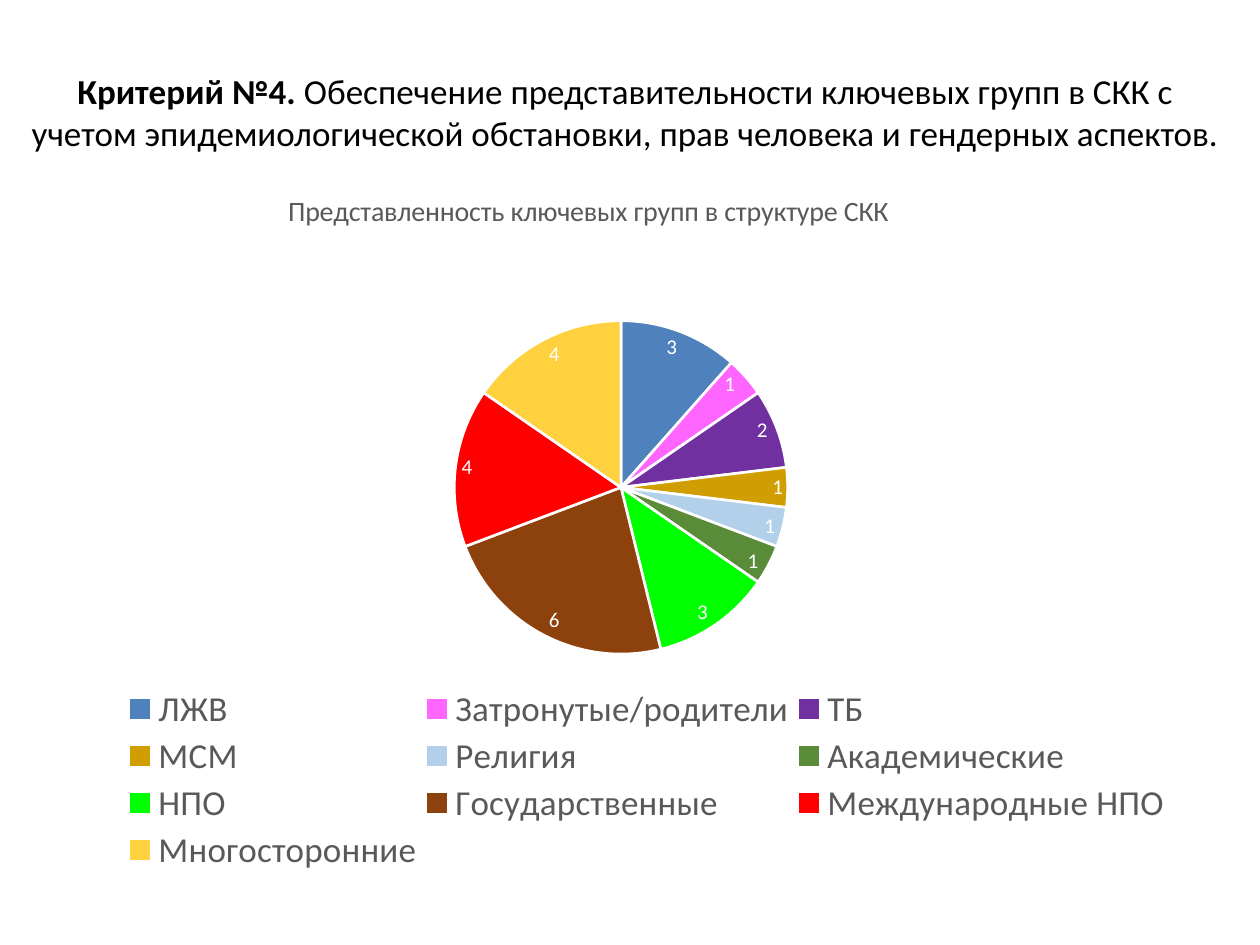
from pptx import Presentation
from pptx.chart.data import CategoryChartData
from pptx.dml.color import RGBColor
from pptx.enum.chart import XL_CHART_TYPE, XL_LABEL_POSITION, XL_LEGEND_POSITION
from pptx.enum.text import MSO_ANCHOR, PP_ALIGN
from pptx.oxml import parse_xml
from pptx.util import Cm, Pt

PIE = XL_CHART_TYPE.PIE
BEST_FIT = XL_LABEL_POSITION.BEST_FIT
BOTTOM = XL_LEGEND_POSITION.BOTTOM
MIDDLE = MSO_ANCHOR.MIDDLE
CENTER = PP_ALIGN.CENTER

FONT = "Calibri"
COLORS = {"text": "000000", "muted": "595959", "white": "FFFFFF"}
HEADING = [
    ("Критерий №4. ", True),
    ("Обеспечение представительности ключевых групп в СКК с учетом "
     "эпидемиологической обстановки, прав человека и гендерных аспектов.", False),
]
CHART_TITLE = "Представленность ключевых групп в структуре СКК"
GROUPS = [
    ("ЛЖВ", 3, "4F81BD"),
    ("Затронутые/родители", 1, "FF66FF"),
    ("ТБ", 2, "7030A0"),
    ("МСМ", 1, "D09E00"),
    ("Религия", 1, "B3D0EB"),
    ("Академические", 1, "5A8B39"),
    ("НПО", 3, "00FF00"),
    ("Государственные", 6, "8D410D"),
    ("Международные НПО", 4, "FF0000"),
    ("Многосторонние", 4, "FFD13F"),
]
CHART_NS = "http://schemas.openxmlformats.org/drawingml/2006/chart"
PERCENT_LAYOUTS = [
    ("title", 1, "", {"x": 18.4, "y": 0.3}),
    ("plotArea", 0, '<c:layoutTarget val="inner"/>',
     {"x": 33.5, "y": 15.3, "w": 29.4, "h": 56.5}),
    ("legend", 1, "", {"x": 4, "y": 71.8, "w": 93, "h": 27.7}),
]


def style_font(font, size, color, bold=False):
    font.name = FONT
    font.size = Pt(size)
    font.bold = bold
    font.color.rgb = RGBColor.from_string(color)


def set_layout(parent, index, target, percents):
    for old in parent.findall(f"{{{CHART_NS}}}layout"):
        parent.remove(old)
    values = "".join(f'<c:{key} val="{percent / 100:.3f}"/>'
                     for key, percent in percents.items())
    parent.insert(index, parse_xml(
        f'<c:layout xmlns:c="{CHART_NS}"><c:manualLayout>{target}'
        f'<c:xMode val="edge"/><c:yMode val="edge"/>{values}'
        "</c:manualLayout></c:layout>"))


def add_heading(slide):
    heading = slide.shapes.add_textbox(Cm(0.3), Cm(0.76), Cm(24.61), Cm(2.97))
    frame = heading.text_frame
    frame.word_wrap = True
    frame.vertical_anchor = MIDDLE
    paragraph = frame.paragraphs[0]
    paragraph.alignment = CENTER
    for text, bold in HEADING:
        run = paragraph.add_run()
        run.text = text
        style_font(run.font, 20, COLORS["text"], bold)


def add_groups_chart(slide):
    names, members, fills = zip(*GROUPS)
    data = CategoryChartData()
    data.categories = names
    data.add_series("Series 1", members)
    chart = slide.shapes.add_chart(
        PIE, Cm(1.5), Cm(3.73), Cm(22.86), Cm(14), data).chart
    style_font(chart.font, 10, COLORS["text"])

    chart.has_title = True
    run = chart.chart_title.text_frame.paragraphs[0].add_run()
    run.text = CHART_TITLE
    style_font(run.font, 16, COLORS["muted"])
    chart.chart_title.include_in_layout = False

    chart.has_legend = True
    chart.legend.position = BOTTOM
    chart.legend.include_in_layout = False
    style_font(chart.legend.font, 20, COLORS["muted"])

    plot = chart.plots[0]
    plot.vary_by_categories = True
    plot.has_data_labels = True
    labels = plot.data_labels
    labels.show_value = True
    labels.show_percentage = False
    labels.position = BEST_FIT
    style_font(labels.font, 12, COLORS["white"])
    for index, fill in enumerate(fills):
        slice_format = plot.series[0].points[index].format
        slice_format.fill.solid()
        slice_format.fill.fore_color.rgb = RGBColor.from_string(fill)
        slice_format.line.color.rgb = RGBColor.from_string(COLORS["white"])
        slice_format.line.width = Pt(1.5)

    for part, index, target, percents in PERCENT_LAYOUTS:
        parent = chart.element.find(f".//{{{CHART_NS}}}{part}")
        set_layout(parent, index, target, percents)


def main():
    presentation = Presentation()
    presentation.slide_width = Cm(25.4)
    presentation.slide_height = Cm(19.05)
    slide = presentation.slides.add_slide(presentation.slide_layouts[6])
    add_heading(slide)
    add_groups_chart(slide)
    presentation.save("out.pptx")


if __name__ == "__main__":
    main()
